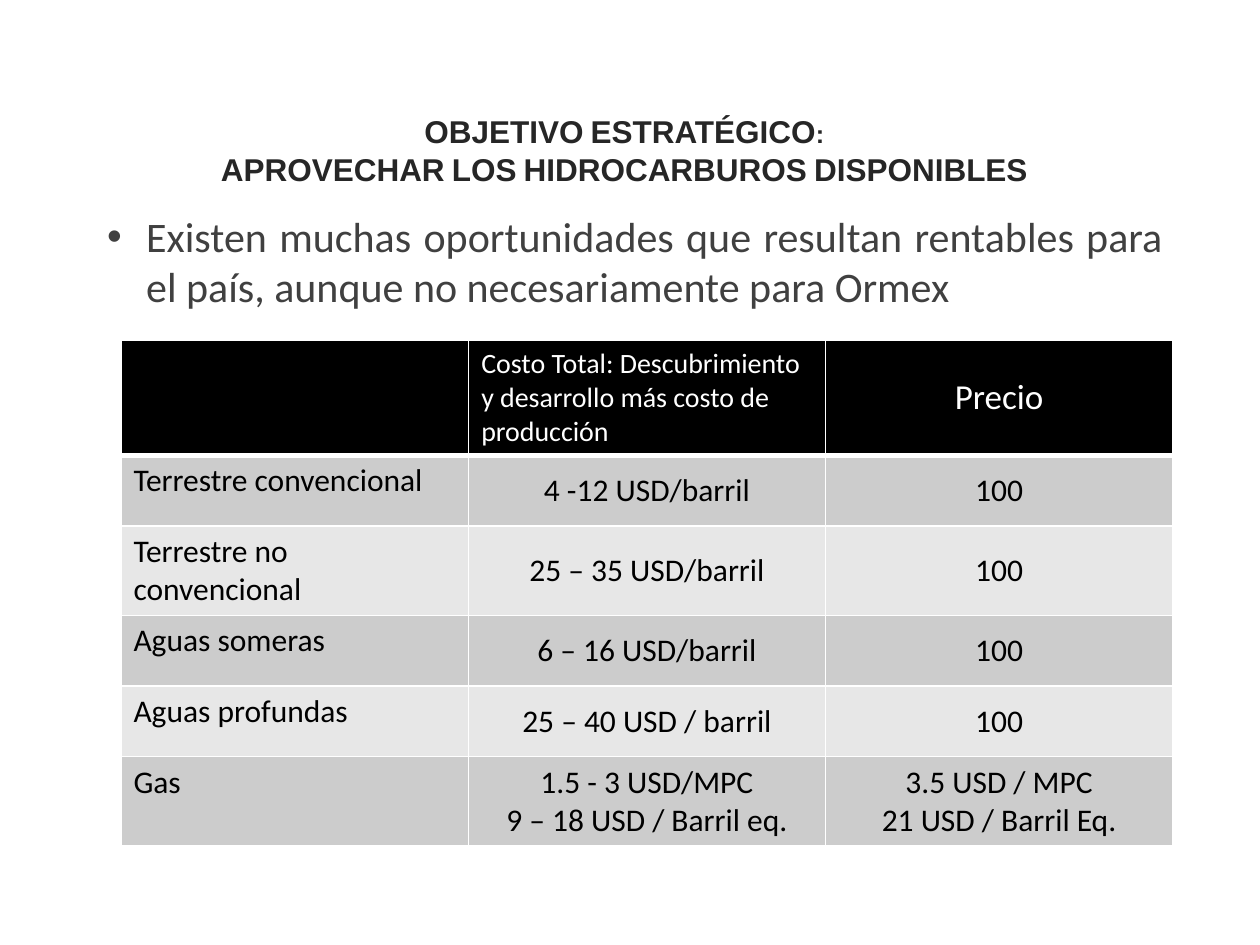
import copy

import pptx
import pptx.dml.color
import pptx.enum.text
import pptx.oxml
import pptx.oxml.ns
import pptx.util

ALIGN = pptx.enum.text.PP_ALIGN
ANCHOR = pptx.enum.text.MSO_ANCHOR
qn = pptx.oxml.ns.qn
inches = pptx.util.Inches

COLORS = {
    "title": "262626", "body": "404040", "header": "000000",
    "odd": "CCCCCC", "even": "E7E7E7", "cell": "000000", "white": "FFFFFF",
}
COLUMNS = [2.76, 2.83, 2.76]
ROW_HEIGHT = 0.56

HEADER = ["", "Costo Total: Descubrimiento y desarrollo más costo de producción",
          "Precio"]
RESOURCES = [
    ["Terrestre convencional", "4 -12 USD/barril", "100"],
    ["Terrestre no convencional", "25 – 35 USD/barril", "100"],
    ["Aguas someras", "6 – 16 USD/barril", "100"],
    ["Aguas profundas", "25 – 40 USD / barril", "100"],
    ["Gas", "1.5 - 3 USD/MPC\n9 – 18 USD / Barril eq.",
     "3.5 USD / MPC\n21 USD / Barril Eq."],
]


def rgb(name):
    return pptx.dml.color.RGBColor.from_string(COLORS[name])


def write(tf, text, size=18, color="cell", font="Calibri", bold=False,
          align=ALIGN.LEFT, small_caps=False):
    """Newlines start paragraphs; vertical tabs are line breaks."""
    for i, line in enumerate(text.split("\n")):
        p = tf.paragraphs[0] if i == 0 else tf.add_paragraph()
        p.text = line
        p.alignment = align
        p.space_before = pptx.util.Pt(0)
        for r in p.runs:
            r.font.size = pptx.util.Pt(size)
            r.font.name = font
            r.font.bold = bold
            r.font.color.rgb = rgb(color)
            if small_caps:
                r.font._element.set("cap", "small")
        for br in p._p.findall(qn("a:br")):
            br.insert(0, copy.deepcopy(p.runs[0].font._element))


def place(sp, left, top, width, height):
    sp.left, sp.top = inches(left), inches(top)
    sp.width, sp.height = inches(width), inches(height)
    tf = sp.text_frame
    tf.word_wrap = True
    tf.auto_size = pptx.enum.text.MSO_AUTO_SIZE.NONE
    tf.vertical_anchor = ANCHOR.TOP
    return tf


def add_bullet(p, char, indent):
    pPr = p._p.get_or_add_pPr()
    pPr.set("marL", str(inches(indent)))
    pPr.set("indent", str(-inches(indent)))
    for tag, key, value in (("buFont", "typeface", "Arial"),
                            ("buChar", "char", char)):
        pptx.oxml.ns  # namespaces come from python-pptx
        el = pPr.makeelement(qn("a:" + tag), {key: value})
        pPr.append(el)


def set_borders(cell, top=1, bottom=1):
    tcPr = cell._tc.get_or_add_tcPr()
    widths = {"lnL": 1, "lnR": 1, "lnT": top, "lnB": bottom}
    for i, (tag, width) in enumerate(widths.items()):
        ln = pptx.oxml.parse_xml(
            f'<a:{tag} {pptx.oxml.ns.nsdecls("a")} w="{pptx.util.Pt(width)}">'
            f'<a:solidFill><a:srgbClr val="{COLORS["white"]}"/></a:solidFill>'
            f'</a:{tag}>')
        tcPr.insert(i, ln)


def fill_cell(cell, text, fill, centered, **fmt):
    cell.fill.solid()
    cell.fill.fore_color.rgb = rgb(fill)
    cell.vertical_anchor = ANCHOR.MIDDLE if centered else ANCHOR.TOP
    write(cell.text_frame, text,
          align=ALIGN.CENTER if centered else ALIGN.LEFT, **fmt)


def add_cost_table(s, left, top):
    rows = [HEADER] + RESOURCES
    table = s.shapes.add_table(
        len(rows), len(COLUMNS), inches(left), inches(top),
        inches(sum(COLUMNS)), inches(ROW_HEIGHT * len(rows))).table
    for column, width in zip(table.columns, COLUMNS):
        column.width = inches(width)
    for i, row in enumerate(rows):
        for j, text in enumerate(row):
            cell = table.cell(i, j)
            if i == 0:
                fill_cell(cell, text, "header", j == 2,
                          size=20 if j == 2 else 16, color="white")
            else:
                fill_cell(cell, text, "odd" if i % 2 else "even", j > 0)
            set_borders(cell, top=3 if i == 1 else 1, bottom=3 if i == 0 else 1)


def main():
    prs = pptx.Presentation()
    prs.slide_width, prs.slide_height = inches(10), inches(7.5)
    s = prs.slides.add_slide(prs.slide_layouts[1])

    # Title
    tf = place(s.shapes.title, 1.06, 0.84, 7.79, 0.56)
    write(tf, "OBJETIVO ESTRATÉGICO:\vAPROVECHAR LOS HIDROCARBUROS DISPONIBLES",
          color="title", font="Arial", bold=True, align=ALIGN.CENTER,
          small_caps=True)

    # Key message
    tf = place(s.placeholders[1], 0.75, 1.62, 8.58, 1.31)
    write(tf, "Existen muchas oportunidades que resultan rentables para el país, "
          "aunque no necesariamente para Ormex",
          size=24, color="body", align=ALIGN.JUSTIFY)
    add_bullet(tf.paragraphs[0], "•", 0.31)

    # Costs and prices by type of resource
    add_cost_table(s, 0.96, 2.7)

    prs.save("out.pptx")


if __name__ == "__main__":
    main()
